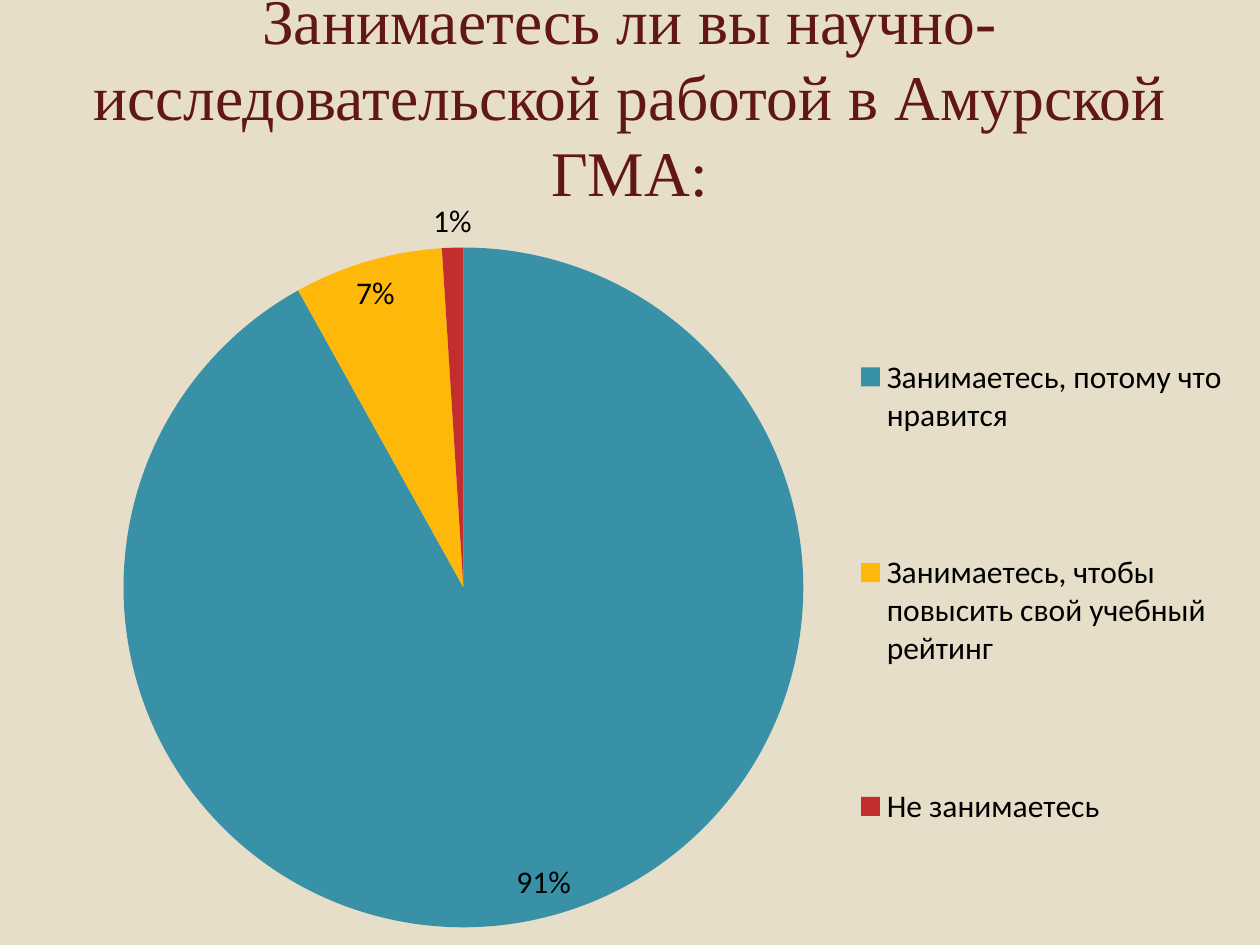
import pptx
import pptx.chart.data
import pptx.dml.color
import pptx.enum.chart
import pptx.enum.text
import pptx.util
from lxml import etree
from pptx.dml.color import RGBColor
from pptx.util import Inches

BACKGROUND = RGBColor(0xE7, 0xDE, 0xC9)
MAROON = RGBColor(0x62, 0x17, 0x17)
BLACK = RGBColor(0, 0, 0)
TEAL = RGBColor(0x38, 0x91, 0xA7)
AMBER = RGBColor(0xFE, 0xB8, 0x0A)
RED = RGBColor(0xC3, 0x2D, 0x2E)

ANSWERS = [
    ("Занимаетесь, потому что нравится", 91, TEAL),
    ("Занимаетесь, чтобы повысить свой учебный рейтинг", 7, AMBER),
    ("Не занимаетесь", 1, RED),
]


class SlideBuilder:
    title_font = "Times New Roman"
    chart_font = "Calibri"

    def __init__(self, deck):
        self.slide = deck.slides.add_slide(deck.slide_layouts[6])
        fill = self.slide.background.fill
        fill.solid()
        fill.fore_color.rgb = BACKGROUND

    def title(self, text, left, top, width, height):
        box = self.slide.shapes.add_textbox(
            Inches(left), Inches(top), Inches(width), Inches(height))
        frame = box.text_frame
        frame.word_wrap = True
        frame.vertical_anchor = pptx.enum.text.MSO_ANCHOR.MIDDLE
        para = frame.paragraphs[0]
        para.alignment = pptx.enum.text.PP_ALIGN.CENTER
        span = para.add_run()
        span.text = text
        span.font.name = self.title_font
        span.font.size = pptx.util.Pt(36.3)
        span.font.color.rgb = MAROON

    def pie(self, answers, left, top, width, height):
        data = pptx.chart.data.CategoryChartData()
        data.categories = [name for name, _, _ in answers]
        data.add_series("Series 1", [value for _, value, _ in answers])
        chart = self.slide.shapes.add_chart(
            pptx.enum.chart.XL_CHART_TYPE.PIE, Inches(left), Inches(top),
            Inches(width), Inches(height), data).chart
        chart.has_title = False
        chart.font.name = self.chart_font
        chart.font.size = pptx.util.Pt(18)
        chart.font.color.rgb = BLACK

        plot = chart.plots[0]
        plot.vary_by_categories = True
        for index, (_, _, color) in enumerate(answers):
            fill = plot.series[0].points[index].format.fill
            fill.solid()
            fill.fore_color.rgb = color

        plot.has_data_labels = True
        labels = plot.data_labels
        labels.show_percentage = False
        labels.show_value = True
        labels.number_format = '0"%"'
        labels.number_format_is_linked = False
        labels.position = pptx.enum.chart.XL_LABEL_POSITION.BEST_FIT

        chart.has_legend = True
        legend = chart.legend
        legend.position = pptx.enum.chart.XL_LEGEND_POSITION.RIGHT
        legend.include_in_layout = False
        plot_area = chart.element.find(".//{*}plotArea")
        self.place(plot_area, 0, 0.034, 0.082, 0.591, 0.895, inner=True)
        self.place(legend._element, 1, 0.67, 0.07, 0.33, 0.93)
        return chart

    def place(self, parent, index, x, y, w, h, inner=False):
        """Fix a chart part at fractions of the chart's size."""
        for old in parent.findall("{*}layout"):
            parent.remove(old)
        namespace = etree.QName(parent).namespace
        layout = parent.makeelement(f"{{{namespace}}}layout")
        manual = etree.SubElement(layout, f"{{{namespace}}}manualLayout")
        settings = [("layoutTarget", "inner")] if inner else []
        settings += [("xMode", "edge"), ("yMode", "edge"),
                     ("x", x), ("y", y), ("w", w), ("h", h)]
        for name, value in settings:
            etree.SubElement(manual, f"{{{namespace}}}{name}", val=str(value))
        parent.insert(index, layout)


def main():
    deck = pptx.Presentation()
    deck.slide_width = Inches(10)
    deck.slide_height = Inches(7.5)
    builder = SlideBuilder(deck)
    builder.pie(ANSWERS, 0.67, 1.47, 9.13, 6.03)
    builder.title("Занимаетесь ли вы научно-исследовательской работой "
                  "в Амурской ГМА:", 0, 0.13, 10, 1.25)
    deck.save("out.pptx")


if __name__ == "__main__":
    main()
